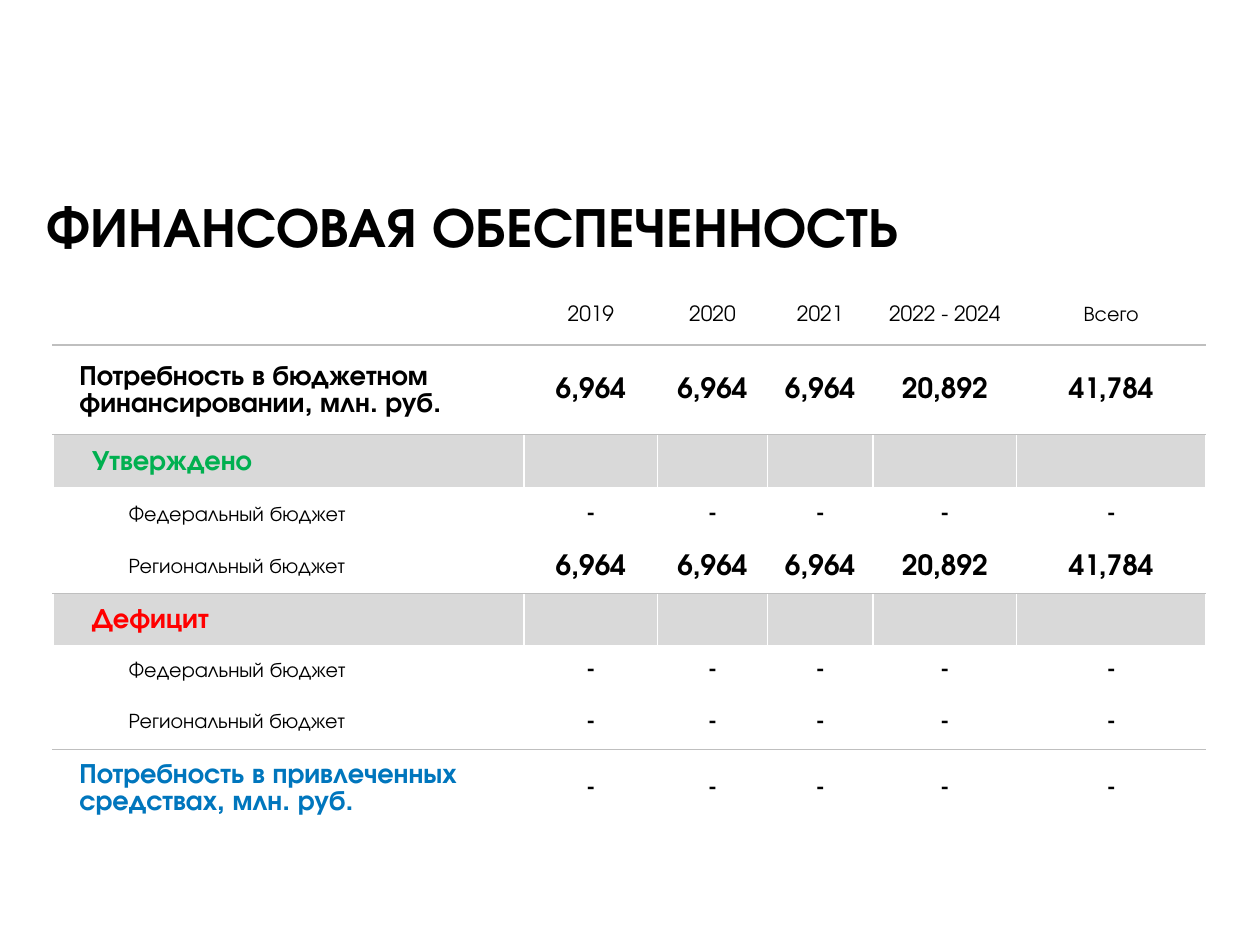
from lxml import etree
from pptx import Presentation
from pptx.dml.color import RGBColor
from pptx.enum.text import MSO_ANCHOR, MSO_AUTO_SIZE, PP_ALIGN
from pptx.oxml.ns import qn
from pptx.util import Inches, Pt

TOP, MIDDLE = MSO_ANCHOR.TOP, MSO_ANCHOR.MIDDLE
LEFT, CENTER = PP_ALIGN.LEFT, PP_ALIGN.CENTER
GROW = MSO_AUTO_SIZE.SHAPE_TO_FIT_TEXT
FONT = "TeX Gyre Adventor"
COLORS = {
    "black": "000000", "white": "FFFFFF", "rule": "BFBFBF", "band": "D9D9D9",
    "approved": "00B050", "deficit": "FF0000", "raised": "0076BD",
}


def style(paragraph, size, bold, color="black", align=LEFT):
    paragraph.alignment = align
    for run in paragraph.runs:
        run.font.name = FONT
        run.font.size = Pt(size)
        run.font.bold = bold
        run.font.color.rgb = RGBColor.from_string(COLORS[color])


def add_border(cell, side, color):
    line = etree.SubElement(cell._tc.get_or_add_tcPr(), qn(f"a:{side}"), w=str(Pt(1)))
    fill = etree.SubElement(line, qn("a:solidFill"))
    etree.SubElement(fill, qn("a:srgbClr"), val=COLORS[color])


prs = Presentation()
prs.slide_width, prs.slide_height = Inches(10), Inches(7.5)
slide = prs.slides.add_slide(prs.slide_layouts[5])

# Title
title = slide.shapes.title
title.left, title.top = Inches(0.27), Inches(1.47)
title.width, title.height = Inches(7.55), Inches(0.64)
title.text_frame.text = "ФИНАНСОВАЯ ОБЕСПЕЧЕННОСТЬ"
title.text_frame.word_wrap = False
title.text_frame.auto_size = GROW
title.text_frame.vertical_anchor = TOP
style(title.text_frame.paragraphs[0], 32, True)

# Budget rows: label, label level, label colour, values
years = ["2019", "2020", "2021", "2022 - 2024", "Всего"]
amounts = ["6,964"] * 3 + ["20,892", "41,784"]
blank, dashes = [""] * 5, ["-"] * 5
budget = [
    ("", "header", "black", years),
    ("Потребность в бюджетном финансировании, млн. руб.", "total", "black", amounts),
    ("Утверждено", "section", "approved", blank),
    ("Федеральный бюджет", "source", "black", dashes),
    ("Региональный бюджет", "source", "black", amounts),
    ("Дефицит", "section", "deficit", blank),
    ("Федеральный бюджет", "source", "black", dashes),
    ("Региональный бюджет", "source", "black", dashes),
    ("Потребность в привлеченных средствах, млн. руб.", "total", "raised", dashes),
]
# Level: left margin, first-line indent, size, bold
levels = {
    "header": (0, 0, 12, False),
    "total": (0.2, 0, 16, True),
    "section": (0, 0.3, 16, True),
    "source": (0.2, 0.39, 12, False),
}
ruled_below = {0, 1, 4, 7}
column_widths = [3.74, 1.06, 0.87, 0.84, 1.14, 1.5]
row_heights = [0.49, 0.71, 0.42, 0.42, 0.42, 0.42, 0.38, 0.44, 0.61]

# Table grid
table = slide.shapes.add_table(
    len(budget), len(column_widths),
    Inches(0.42), Inches(2.25), Inches(9.15), Inches(4.33)).table
table.first_row = table.horz_banding = False
for column, width in zip(table.columns, column_widths):
    column.width = Inches(width)
for row, height in zip(table.rows, row_heights):
    row.height = Inches(height)

# Table cells
for r, (label, level, label_color, values) in enumerate(budget):
    margin, indent, label_size, label_bold = levels[level]
    for c, text in enumerate([label] + values):
        cell = table.cell(r, c)
        cell.vertical_anchor = MIDDLE
        cell.margin_left = cell.margin_right = cell.margin_top = Inches(0.01)
        cell.margin_bottom = 0

        add_border(cell, "lnL", "white")
        add_border(cell, "lnR", "white")
        add_border(cell, "lnT", "rule" if r - 1 in ruled_below else "white")
        add_border(cell, "lnB", "rule" if r in ruled_below else "white")
        if level == "section":
            cell.fill.solid()
            cell.fill.fore_color.rgb = RGBColor.from_string(COLORS["band"])
        else:
            cell.fill.background()

        if not text:
            continue
        cell.text_frame.text = text
        paragraph = cell.text_frame.paragraphs[0]
        if c == 0:
            properties = paragraph._p.get_or_add_pPr()
            properties.set("marL", str(Inches(margin)))
            properties.set("indent", str(Inches(indent)))
            style(paragraph, label_size, label_bold, label_color)
        else:
            style(paragraph, 16 if values is amounts else 12, level != "header", align=CENTER)
        if c == 0 or level == "header":
            paragraph.line_spacing = 1.07
            paragraph.space_after = Pt(8)

prs.save("out.pptx")
